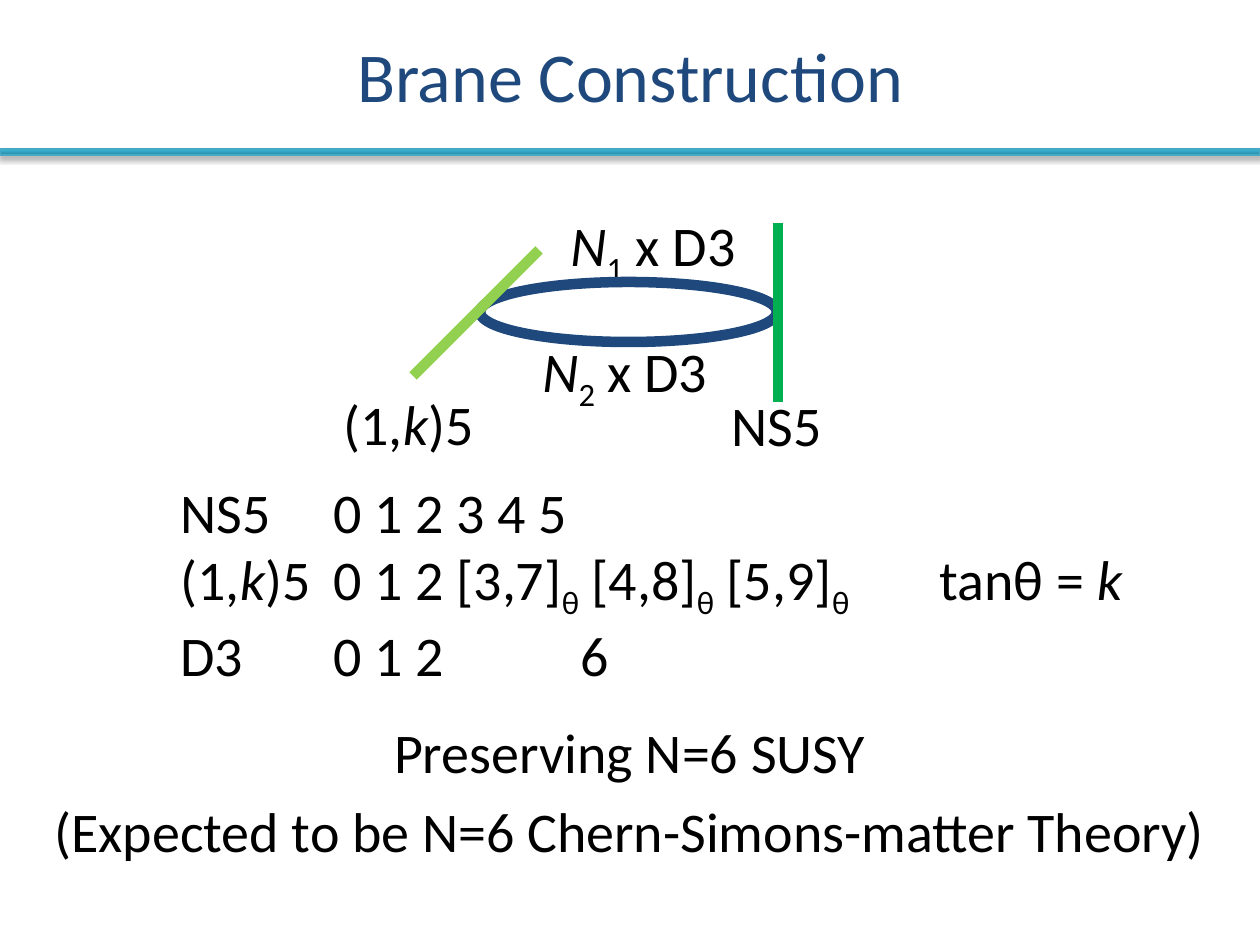
from lxml.etree import SubElement
from pptx import Presentation
from pptx.dml.color import RGBColor
from pptx.enum.shapes import MSO_CONNECTOR, MSO_SHAPE
from pptx.enum.text import MSO_ANCHOR, MSO_AUTO_SIZE, PP_ALIGN
from pptx.oxml import parse_xml
from pptx.oxml.ns import nsdecls, qn
from pptx.util import Emu, Pt

EMU_PER_PX = 914400 / 126
FONT = "Calibri"
NAVY = RGBColor(0x1F, 0x49, 0x7D)
BLACK = RGBColor(0x00, 0x00, 0x00)
LIME = RGBColor(0x92, 0xD0, 0x50)
GREEN = RGBColor(0x00, 0xB0, 0x50)
TEAL_EDGE = RGBColor(0x46, 0xAA, 0xC5)
TEAL_STOPS = [
    (0, RGBColor(0x2A, 0x88, 0xA2)),
    (80, RGBColor(0x37, 0xB1, 0xD2)),
    (100, RGBColor(0x34, 0xB4, 0xD6)),
]


def px(*lengths):
    return [Emu(round(length * EMU_PER_PX)) for length in lengths]


def write_text(frame, paragraphs, size=32, color=BLACK, align=PP_ALIGN.LEFT, tabs=()):
    for index, parts in enumerate(paragraphs):
        paragraph = frame.paragraphs[0] if index == 0 else frame.add_paragraph()
        paragraph.alignment = align
        for text, style in parts:
            run = paragraph.add_run()
            run.text = text
            run.font.name = FONT
            run.font.size = Pt(size)
            run.font.color.rgb = color
            if style == "italic":
                run.font.italic = True
            if style == "subscript":
                run.font._element.set("baseline", "-25000")
        if tabs:
            tab_list = SubElement(paragraph._p.get_or_add_pPr(), qn("a:tabLst"))
            for position in px(*tabs):
                SubElement(tab_list, qn("a:tab"), pos=str(position), algn="l")


def add_text(shapes, box, paragraphs, **text_format):
    text_box = shapes.add_textbox(*px(*box))
    frame = text_box.text_frame
    frame.word_wrap = False
    frame.auto_size = MSO_AUTO_SIZE.SHAPE_TO_FIT_TEXT
    write_text(frame, paragraphs, **text_format)


def add_line(shapes, start, end, color):
    connector = shapes.add_connector(MSO_CONNECTOR.STRAIGHT, *px(*start, *end))
    connector.line.color.rgb = color
    connector.line.width = Pt(6)
    SubElement(connector._element.spPr, qn("a:effectLst"))


def add_header(slide, left, top, width, height):
    rule = slide.shapes.add_shape(
        MSO_SHAPE.RECTANGLE, *px(left, top + height, width, 6)
    )
    rule.line.color.rgb = TEAL_EDGE
    rule.line.width = Pt(0.75)
    stops = "".join(
        f'<a:gs pos="{position * 1000}"><a:srgbClr val="{color}"/></a:gs>'
        for position, color in TEAL_STOPS
    )
    properties = rule._element.spPr
    properties.find(qn("a:ln")).addprevious(parse_xml(
        f'<a:gradFill {nsdecls("a")} rotWithShape="1"><a:gsLst>{stops}</a:gsLst>'
        '<a:lin ang="16200000" scaled="0"/></a:gradFill>'
    ))
    properties.append(parse_xml(
        f'<a:effectLst {nsdecls("a")}><a:outerShdw blurRad="{Pt(3.1)}" '
        f'dist="{Pt(1.8)}" dir="5400000" rotWithShape="0"><a:srgbClr val="000000">'
        '<a:alpha val="35000"/></a:srgbClr></a:outerShdw></a:effectLst>'
    ))
    title = slide.shapes.title
    title.left, title.top, title.width, title.height = px(left, top, width, height)
    title.text_frame.vertical_anchor = MSO_ANCHOR.MIDDLE
    write_text(
        title.text_frame, [[("Brane Construction", "")]],
        size=40, color=NAVY, align=PP_ALIGN.CENTER,
    )


def add_brane_diagram(slide, left, top):
    shapes = slide.shapes.add_group_shape().shapes
    for x, y, number in [(227, 0, "1"), (199, 126, "2")]:
        label = [(("N"), "italic"), (number, "subscript"), (" x D3", "")]
        add_text(shapes, (left + x, top + y, 195, 81), [label])
    five_brane = [("(1,", ""), ("k", "italic"), (")5", "")]
    add_text(shapes, (left, top + 179, 158, 81), [five_brane])
    add_text(shapes, (left + 388, top + 180, 117, 81), [[("NS5", "")]])
    loop = shapes.add_shape(
        MSO_SHAPE.OVAL, *px(left + 149, top + 78, 297, 60)
    )
    loop.shadow.inherit = False
    loop.fill.background()
    loop.line.color.rgb = NAVY
    loop.line.width = Pt(6)
    add_line(shapes, (left + 208, top + 46), (left + 82, top + 172), LIME)
    add_line(shapes, (left + 447, top + 19), (left + 447, top + 198), GREEN)


def add_directions(slide, left, top, width, height):
    tilted = [("(1,", ""), ("k", "italic"), (")5\t0 1 2", "")]
    for plane in ("[3,7]", "[4,8]", "[5,9]"):
        tilted += [(" " + plane, ""), ("θ", "subscript")]
    tilted += [("\ttanθ = ", ""), ("k", "italic")]
    rows = [
        [("NS5\t0 1 2 3 4 5", "")],
        tilted,
        [("D3\t0 1 2\t6", "")],
    ]
    add_text(slide.shapes, (left, top, width, height), rows, tabs=(153, 400, 759))


def add_conclusion(slide, center, top):
    lines = [
        ("Preserving N=6 SUSY", 501, 0),
        ("(Expected to be N=6 Chern-Simons-matter Theory)", 1190, 79),
    ]
    for text, width, offset in lines:
        box = (center - width / 2, top + offset, width, 81)
        add_text(slide.shapes, box, [[(text, "")]], align=PP_ALIGN.CENTER)


def main():
    presentation = Presentation()
    presentation.slide_width, presentation.slide_height = px(1260, 945)
    slide = presentation.slides.add_slide(presentation.slide_layouts[5])
    add_header(slide, 0, 0, 1260, 149)
    add_directions(slide, 168, 471, 987, 217)
    add_brane_diagram(slide, 331, 204)
    add_conclusion(slide, 630, 711)
    presentation.save("out.pptx")


if __name__ == "__main__":
    main()
